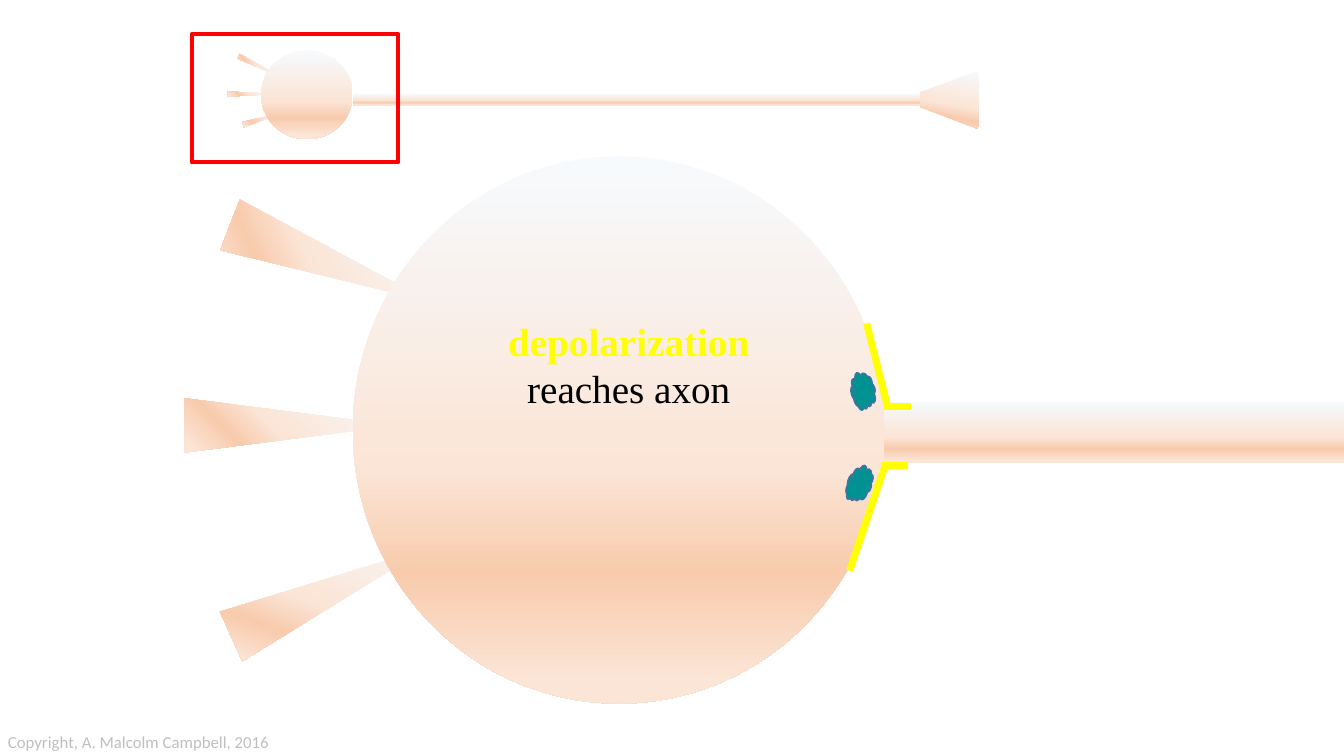
import copy

import pptx
import pptx.dml.color
import pptx.enum.shapes
import pptx.enum.text
import pptx.oxml
import pptx.oxml.ns
import pptx.util

Cm = pptx.util.Cm
Pt = pptx.util.Pt
RGBColor = pptx.dml.color.RGBColor
SHAPE = pptx.enum.shapes.MSO_SHAPE
ALIGN = pptx.enum.text.PP_ALIGN

BLACK = RGBColor(0x00, 0x00, 0x00)
YELLOW = RGBColor(0xFF, 0xFF, 0x00)
RED = RGBColor(0xFF, 0x00, 0x00)
GREY = RGBColor(0xBF, 0xBF, 0xBF)
TEAL = RGBColor(0x00, 0x91, 0x93)
BLUE = RGBColor(0x43, 0x73, 0x9E)
PALE = RGBColor(0xF7, 0xFA, 0xFD)
PEACH = RGBColor(0xFB, 0xE5, 0xD6)
ORANGE = RGBColor(0xF8, 0xCB, 0xAD)

CELL_STOPS = [(0, PALE), (0.57, PEACH), (0.76, ORANGE), (0.96, PEACH)]

LARGE_DENDRITES = [(7.62, 3.94, 111), (6.65, 8.03, 90), (7.59, 12.24, 65.6)]
SMALL_DENDRITES = [(6.5, 1.07, 116), (6.3, 1.75, 90), (6.65, 2.34, 73)]
CHANNELS = [(21.36, 11.71, 196.6), (21.44, 9.37, 161.7)]
MEMBRANE = [
    (21.84, 8.15, 22.38, 10.29),
    (21.41, 14.38, 22.28, 11.81),
    (22.89, 11.73, 22.2, 11.73),
    (22.96, 10.24, 22.28, 10.24),
]


def add_plain_shape(slide, kind, left, top, width, height, rotation=0):
    shape = slide.shapes.add_shape(kind, Cm(left), Cm(top), Cm(width), Cm(height))
    shape.shadow.inherit = False
    shape.rotation = rotation
    return shape


def add_cell_part(slide, kind, left, top, width, height, rotation=0, angle=90):
    shape = add_plain_shape(slide, kind, left, top, width, height, rotation)
    shape.line.fill.background()
    shape.fill.gradient()
    shape.fill.gradient_angle = 360 - angle
    stop_list = next(shape._element.spPr.iter(pptx.oxml.ns.qn("a:gsLst")))
    while len(stop_list) < len(CELL_STOPS):
        stop_list.append(copy.deepcopy(stop_list[0]))
    for stop, (position, color) in zip(shape.fill.gradient_stops, CELL_STOPS):
        stop.position = position
        stop.color.rgb = color
    return shape


def add_dendrites(slide, places, width, height):
    for left, top, rotation in places:
        add_cell_part(slide, SHAPE.ISOSCELES_TRIANGLE, left, top, width, height, rotation, 45)


def add_focus_frame(slide):
    frame = add_plain_shape(slide, SHAPE.RECTANGLE, 4.83, 0.86, 5.21, 3.23)
    frame.fill.background()
    frame.line.color.rgb = RED
    frame.line.width = Pt(3)


def add_channel(slide, left, top, rotation):
    channel = add_plain_shape(slide, SHAPE.CLOUD, left, top, 0.61, 0.94, rotation)
    channel.fill.solid()
    channel.fill.fore_color.rgb = TEAL
    channel.line.color.rgb = BLUE
    channel.line.width = Pt(1)


def add_membrane_line(slide, *ends):
    line = slide.shapes.add_connector(
        pptx.enum.shapes.MSO_CONNECTOR.STRAIGHT, *(Cm(end) for end in ends)
    )
    line.line.color.rgb = YELLOW
    line.line.width = Pt(5)
    properties = line._element.spPr
    properties.append(properties.makeelement(pptx.oxml.ns.qn("a:effectLst"), {}))


def add_text(slide, left, top, width, height, lines, alignment, wrap):
    box = slide.shapes.add_textbox(Cm(left), Cm(top), Cm(width), Cm(height))
    frame = box.text_frame
    frame.word_wrap = wrap
    frame.auto_size = pptx.enum.text.MSO_AUTO_SIZE.SHAPE_TO_FIT_TEXT
    for index, (text, color, formats) in enumerate(lines):
        paragraph = frame.add_paragraph() if index else frame.paragraphs[0]
        paragraph.alignment = alignment
        run = paragraph.add_run()
        run.text = text
        run.font.color.rgb = color
        for name, value in formats.items():
            setattr(run.font, name, value)
    return box


def add_text_outline(run):
    outline = pptx.oxml.parse_xml(
        f'<a:ln {pptx.oxml.ns.nsdecls("a")} w="{Pt(0.75)}"><a:solidFill>'
        f'<a:srgbClr val="{BLACK}"/></a:solidFill></a:ln>'
    )
    run._r.get_or_add_rPr().insert(0, outline)


def add_neuron_overview(slide):
    add_dendrites(slide, SMALL_DENDRITES, 0.13, 1.24)
    add_cell_part(slide, SHAPE.OVAL, 6.58, 1.27, 2.31, 2.24)
    add_cell_part(slide, SHAPE.RECTANGLE, 8.89, 2.36, 14.33, 0.3)
    terminal = add_cell_part(slide, SHAPE.TRAPEZOID, 23.19, 1.78, 1.47, 1.47, 270, 190)
    terminal.adjustments[0] = 0.377
    add_focus_frame(slide)


def add_caption(slide):
    serif = {"name": "Times New Roman", "size": Pt(28)}
    lines = [
        ("depolarization", YELLOW, {**serif, "bold": True}),
        ("reaches axon", BLACK, {**serif, "bold": False}),
    ]
    caption = add_text(slide, 9.42, 7.87, 12.85, 2.64, lines, ALIGN.CENTER, True)
    add_text_outline(caption.text_frame.paragraphs[0].runs[0])


def main():
    presentation = pptx.Presentation()
    presentation.slide_width = Cm(33.87)
    presentation.slide_height = Cm(19.05)
    slide = presentation.slides.add_slide(presentation.slide_layouts[6])

    add_cell_part(slide, SHAPE.RECTANGLE, 21.41, 10.13, 14.33, 1.55)
    add_dendrites(slide, LARGE_DENDRITES, 1.37, 5.38)
    add_neuron_overview(slide)
    add_cell_part(slide, SHAPE.OVAL, 8.89, 3.94, 13.41, 13.79)
    add_caption(slide)
    for channel in CHANNELS:
        add_channel(slide, *channel)
    for ends in MEMBRANE:
        add_membrane_line(slide, *ends)
    credit = ("Copyright, A. Malcolm Campbell, 2016", GREY, {"name": "Calibri", "size": Pt(12)})
    add_text(slide, -0.05, 18.31, 7.16, 0.76, [credit], ALIGN.LEFT, False)

    presentation.save("out.pptx")


if __name__ == "__main__":
    main()
